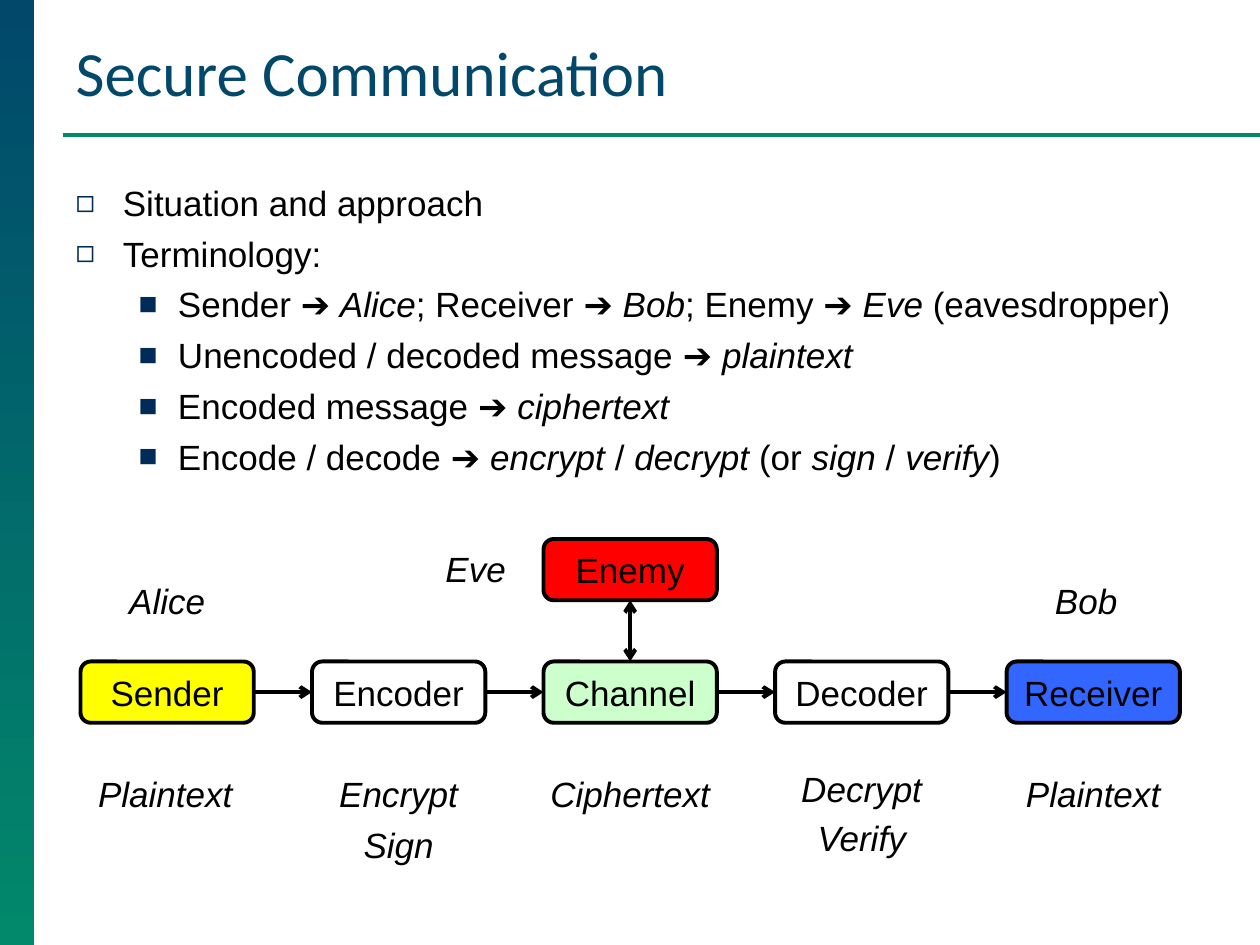
from itertools import pairwise

from lxml.etree import SubElement
from pptx import Presentation
from pptx.dml.color import RGBColor
from pptx.enum.shapes import MSO_CONNECTOR, MSO_SHAPE
from pptx.enum.text import MSO_ANCHOR, MSO_AUTO_SIZE, PP_ALIGN
from pptx.oxml.ns import qn
from pptx.util import Pt

COLORS = {
    "navy": "01486B", "green": "02886B", "bullet": "002A58",
    "black": "000000", "white": "FFFFFF", "yellow": "FFFF00",
    "blue": "3366FF", "mint": "CCFFCC", "red": "FF0000",
}


def rgb(name):
    return RGBColor.from_string(COLORS[name])


class SlideBuilder:
    """Holds the style and the current slide, and adds each kind of element."""

    font = "Arial"
    size = 20
    line_width = 2.25

    def __init__(self, slide):
        self.slide = slide

    def place(self, shape, left, top, width, height):
        shape.left, shape.top = Pt(left), Pt(top)
        shape.width, shape.height = Pt(width), Pt(height)

    def add_runs(self, paragraph, text, font=None, size=None, color="black"):
        """Adds runs to a paragraph; asterisks switch italics on and off."""
        for index, part in enumerate(text.split("*")):
            if part:
                run = paragraph.add_run()
                run.text = part
                run.font.name = font or self.font
                run.font.size = Pt(size or self.size)
                run.font.italic = index % 2 == 1
                run.font.color.rgb = rgb(color)

    def title(self, text, *bounds):
        title = self.slide.shapes.title
        self.place(title, *bounds)
        title.text_frame.vertical_anchor = MSO_ANCHOR.BOTTOM
        paragraph = title.text_frame.paragraphs[0]
        paragraph.alignment = PP_ALIGN.LEFT
        self.add_runs(paragraph, text, "Calibri", 36, "navy")

    def bullets(self, items, *bounds):
        body = self.slide.placeholders[1]
        self.place(body, *bounds)
        frame = body.text_frame
        frame.auto_size = MSO_AUTO_SIZE.NONE
        for index, (level, text) in enumerate(items):
            paragraph = frame.add_paragraph() if index else frame.paragraphs[0]
            paragraph.level = level
            mark, margin, indent = (("◻", 27, -27), ("■", 58.5, -22.5))[level]
            properties = paragraph._p.get_or_add_pPr()
            properties.set("marL", str(Pt(margin)))
            properties.set("indent", str(Pt(indent)))
            color = SubElement(properties, qn("a:buClr"))
            SubElement(color, qn("a:srgbClr"), val=COLORS["bullet"])
            SubElement(properties, qn("a:buSzPct"), val="90000")
            SubElement(properties, qn("a:buChar"), char=mark)
            paragraph.space_before = Pt(5 if index else 0)
            self.add_runs(paragraph, text)

    def side_bar(self, *bounds):
        bar = self.slide.shapes.add_shape(MSO_SHAPE.RECTANGLE, *map(Pt, bounds))
        bar.shadow.inherit = False
        bar.line.fill.background()
        bar.fill.gradient()
        bar.fill.gradient_angle = 270
        for stop, color in zip(bar.fill.gradient_stops, ("navy", "green")):
            stop.color.rgb = rgb(color)

    def box(self, text, fill, *bounds):
        box = self.slide.shapes.add_shape(
            MSO_SHAPE.ROUNDED_RECTANGLE, *map(Pt, bounds))
        box.shadow.inherit = False
        box.fill.solid()
        box.fill.fore_color.rgb = rgb(fill)
        box.line.color.rgb = rgb("black")
        box.line.width = Pt(self.line_width)
        box.text_frame.vertical_anchor = MSO_ANCHOR.MIDDLE
        paragraph = box.text_frame.paragraphs[0]
        paragraph.alignment = PP_ALIGN.CENTER
        self.add_runs(paragraph, text)
        return box

    def label(self, lines, center, top, width, height=31.7, spacings=(1, 0.7)):
        label = self.slide.shapes.add_textbox(
            Pt(center - width / 2), Pt(top), Pt(width), Pt(height))
        frame = label.text_frame
        frame.word_wrap = False
        for index, (text, spacing) in enumerate(zip(lines, spacings)):
            paragraph = frame.add_paragraph() if index else frame.paragraphs[0]
            paragraph.alignment = PP_ALIGN.CENTER
            paragraph.line_spacing = spacing
            paragraph.space_before = Pt(11.5 if index else 0)
            self.add_runs(paragraph, f"*{text}*")

    def line(self, color, *ends):
        line = self.slide.shapes.add_connector(
            MSO_CONNECTOR.STRAIGHT, *map(Pt, ends))
        line.line.color.rgb = rgb(color)
        line.line.width = Pt(self.line_width)
        SubElement(line._element.spPr, qn("a:effectLst"))
        return line

    def arrow(self, start, start_side, end, end_side, heads=("tailEnd",)):
        arrow = self.line("black", 0, 0, 0, 0)
        arrow.begin_connect(start, start_side)
        arrow.end_connect(end, end_side)
        for head in heads:
            SubElement(arrow.line._get_or_add_ln(), qn(f"a:{head}"), type="arrow")


def main():
    presentation = Presentation()
    presentation.slide_width, presentation.slide_height = Pt(720), Pt(540)
    builder = SlideBuilder(
        presentation.slides.add_slide(presentation.slide_layouts[1]))

    builder.side_bar(0, 0, 19.5, 540)
    builder.line("green", 36, 77, 720, 77)
    builder.title("Secure Communication", 36, 15, 668, 51)
    builder.bullets([
        (0, "Situation and approach"),
        (0, "Terminology:"),
        (1, "Sender ➔ *Alice*; Receiver ➔ *Bob*; Enemy ➔ *Eve* (eavesdropper)"),
        (1, "Unencoded / decoded message ➔ *plaintext*"),
        (1, "Encoded message ➔ *ciphertext*"),
        (1, "Encode / decode ➔ *encrypt* /* decrypt* (or *sign* / *verify*)"),
    ], 36, 100, 642, 397)

    left, pitch, width, height = 46, 132.3, 99, 35
    stages = [("Sender", "yellow"), ("Encoder", "white"), ("Channel", "mint"),
              ("Decoder", "white"), ("Receiver", "blue")]
    chain = [builder.box(name, fill, left + index * pitch, 378, width, height)
             for index, (name, fill) in enumerate(stages)]
    enemy = builder.box("Enemy", "red", left + 2 * pitch, 308, width, height)
    for sender, receiver in pairwise(chain):
        builder.arrow(sender, 3, receiver, 1)
    builder.arrow(enemy, 2, chain[2], 0, ("headEnd", "tailEnd"))

    centers = [left + width / 2 + index * pitch for index in range(len(stages))]
    builder.label(["Alice"], centers[0], 327.6, 63)
    builder.label(["Bob"], centers[4] - 4, 327.6, 55)
    builder.label(["Eve"], 271.8, 309.6, 54)
    builder.label(["Plaintext"], centers[0] - 1, 438, 97)
    builder.label(["Encrypt", "Sign"], centers[1], 438, 88, 62)
    builder.label(["Ciphertext"], centers[2], 438, 112)
    builder.label(["Decrypt", "Verify"], centers[3], 441.4, 89, 55, (0.7, 0.7))
    builder.label(["Plaintext"], centers[4], 438, 97)

    presentation.save("out.pptx")


if __name__ == "__main__":
    main()
